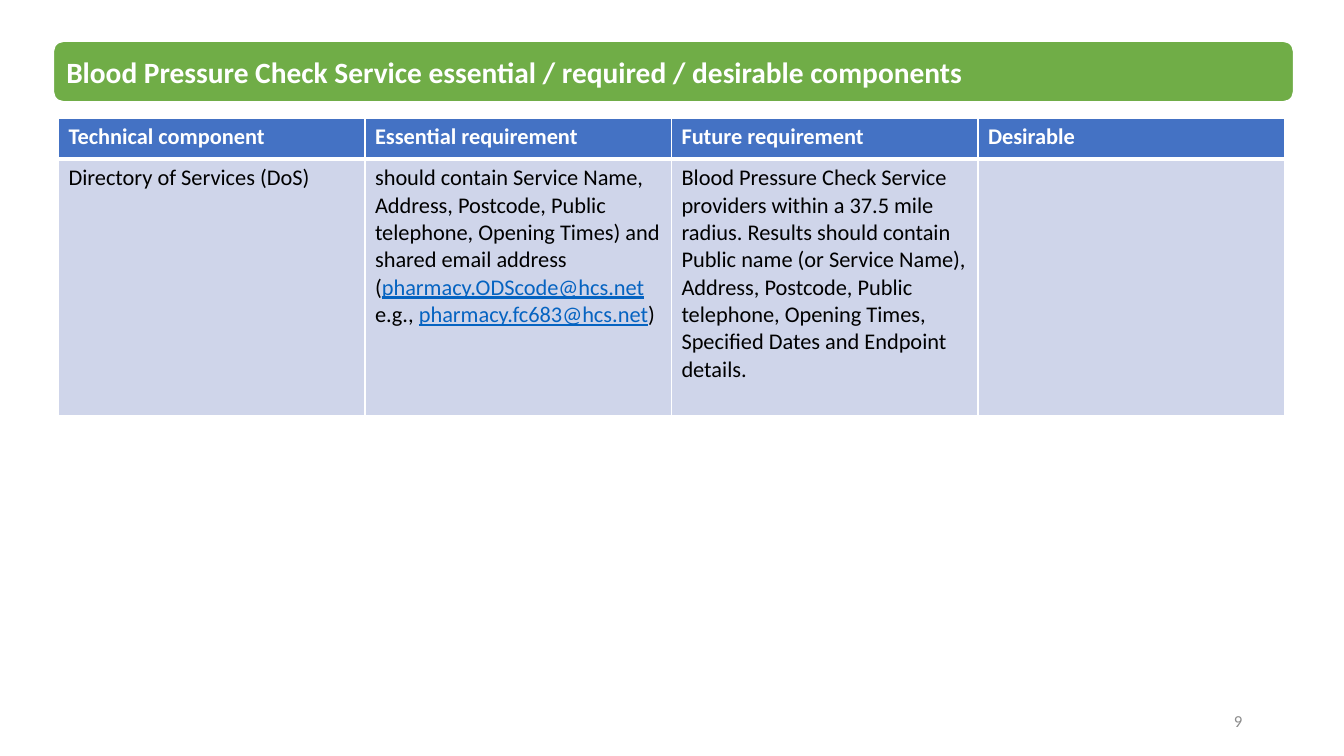
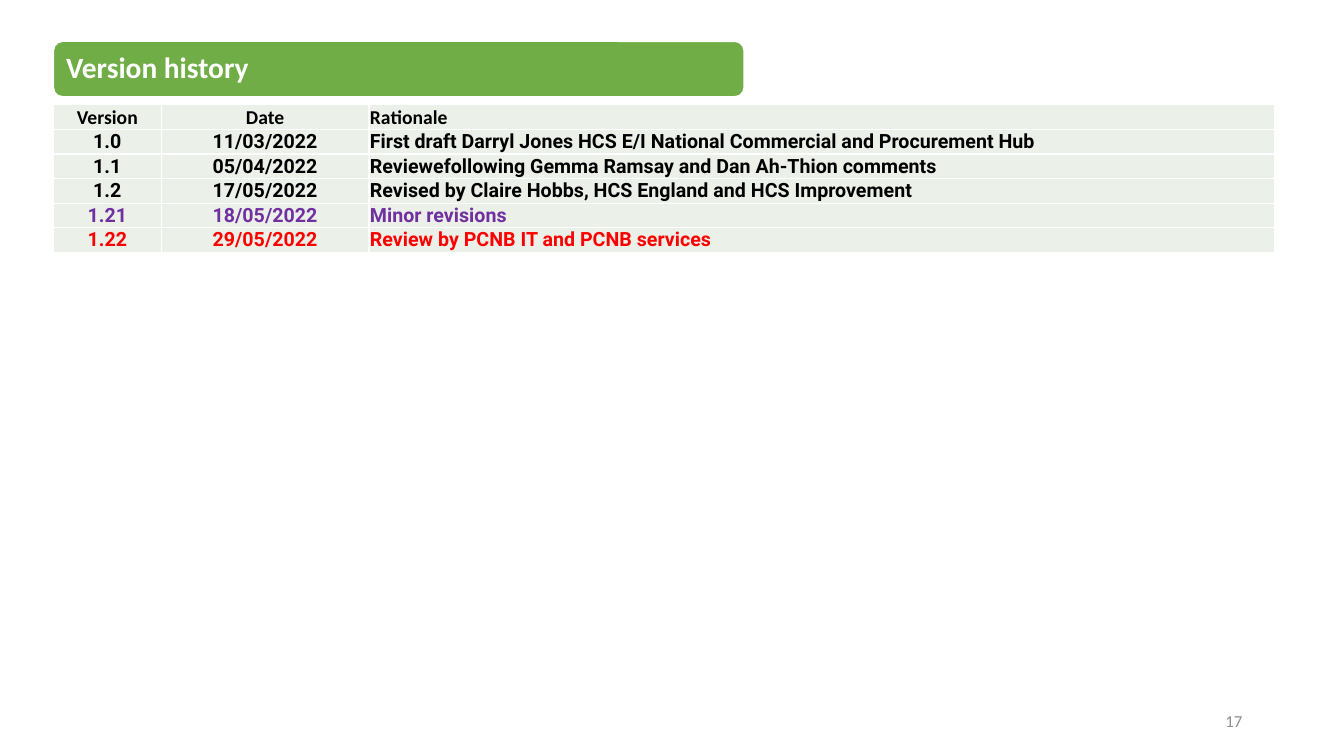
from dataclasses import dataclass
from typing import Any

import pptx
import pptx.dml.color
import pptx.enum.shapes
import pptx.enum.text
import pptx.oxml
import pptx.oxml.ns
import pptx.util

Inches = pptx.util.Inches
Pt = pptx.util.Pt
Color = pptx.dml.color.RGBColor
Align = pptx.enum.text.PP_ALIGN
Anchor = pptx.enum.text.MSO_ANCHOR


@dataclass(frozen=True)
class Theme:
    font: str = "Calibri"
    alt: str = "Roboto"
    white: Color = Color.from_string("FFFFFF")
    black: Color = Color.from_string("000000")
    gray: Color = Color.from_string("8C8C8C")
    green: Color = Color.from_string("70AD47")
    blue: Color = Color.from_string("4472C4")
    pale: Color = Color.from_string("CFD5EA")
    mint: Color = Color.from_string("EBF1E9")
    link: Color = Color.from_string("0563C1")
    purple: Color = Color.from_string("7030A0")
    red: Color = Color.from_string("FF0000")
    title: int = 21
    body: int = 16
    small: int = 14
    foot: int = 12


THEME = Theme()


@dataclass(frozen=True)
class Band:
    text: str
    width: float
    height: float
    pitch: float = 1.0


@dataclass(frozen=True)
class Style:
    """Look of one table row; rule is the width of its bottom border."""
    fill: Color
    color: Color
    size: int
    bold: bool = True
    font: str = THEME.font
    rule: float = 1


@dataclass(frozen=True)
class Row:
    """Cells are text, or a tuple in which every second part is a link."""
    cells: tuple[str | tuple[str, ...], ...]
    style: Style
    height: float


@dataclass(frozen=True)
class Grid:
    left: float
    top: float
    cols: tuple[float, ...]
    rows: tuple[Row, ...]
    center: int = 0  # number of leading columns that are centred
    tight: bool = False


@dataclass(frozen=True)
class Page:
    number: int
    band: Band
    grid: Grid


HEAD = Style(THEME.blue, THEME.white, THEME.body, rule=3)
BODY = Style(THEME.pale, THEME.black, THEME.body, bold=False)
TOP = Style(THEME.mint, THEME.black, THEME.small)


def log(version: str, date: str, reason: str, color: Color = THEME.black) -> Row:
    style = Style(THEME.mint, color, THEME.small, font=THEME.alt)
    return Row((version, date, reason), style, 0.24)


PAGES = (
    Page(
        9,
        Band("Blood Pressure Check Service essential / required / desirable components",
             12.3, 0.6),
        Grid(0.58, 1.17, (3.04,) * 4, (
            Row(("Technical component", "Essential requirement",
                 "Future requirement", "Desirable"), HEAD, 0.41),
            Row((
                "Directory of Services (DoS)",
                ("should contain Service Name, Address, Postcode, Public telephone, "
                 "Opening Times) and shared email address (",
                 "pharmacy.ODScode@hcs.net", " e.g., ", "pharmacy.fc683@hcs.net", ")"),
                "Blood Pressure Check Service providers within a 37.5 mile radius. "
                "Results should contain Public name (or Service Name), Address, "
                "Postcode, Public telephone, Opening Times, Specified Dates and "
                "Endpoint details.",
                "",
            ), BODY, 2.54),
        )),
    ),
    Page(
        17,
        Band("Version history", 6.85, 0.55, pitch=0.9),
        Grid(0.53, 1.04, (1.07, 2.06, 8.98), (
            Row(("Version", "Date", "Rationale"), TOP, 0.24),
            log("1.0", "11/03/2022",
                "First draft Darryl Jones HCS E/I National Commercial and Procurement Hub"),
            log("1.1", "05/04/2022",
                "Reviewefollowing Gemma Ramsay and Dan Ah-Thion comments"),
            log("1.2", "17/05/2022",
                "Revised by Claire Hobbs, HCS England and HCS Improvement"),
            log("1.21", "18/05/2022", "Minor revisions", THEME.purple),
            log("1.22", "29/05/2022", "Review by PCNB IT and PCNB services", THEME.red),
        ), center=2, tight=True),
    ),
)


def paint(run: Any, size: int, color: Color, bold: bool = False,
          font: str = THEME.font) -> None:
    run.font.name = font
    run.font.size = Pt(size)
    run.font.bold = bold
    run.font.color.rgb = color


def add_band(slide: Any, band: Band) -> None:
    shape = slide.shapes.add_shape(
        pptx.enum.shapes.MSO_SHAPE.ROUNDED_RECTANGLE,
        Inches(0.53), Inches(0.41), Inches(band.width), Inches(band.height))
    shape.shadow.inherit = False
    shape.fill.solid()
    shape.fill.fore_color.rgb = THEME.green
    shape.line.color.rgb = THEME.white
    shape.line.width = Pt(1)
    frame = shape.text_frame
    frame.text = band.text
    frame.vertical_anchor = Anchor.MIDDLE
    para = frame.paragraphs[0]
    para.alignment = Align.LEFT
    para.line_spacing = band.pitch
    paint(para.runs[0], THEME.title, THEME.white, bold=True)


def add_foot(slide: Any, number: int) -> None:
    box = slide.shapes.add_textbox(Inches(9.42), Inches(6.95), Inches(3), Inches(0.4))
    frame = box.text_frame
    frame.word_wrap = True
    frame.text = str(number)
    frame.vertical_anchor = Anchor.MIDDLE
    para = frame.paragraphs[0]
    para.alignment = Align.RIGHT
    paint(para.runs[0], THEME.foot, THEME.gray)


def edge(cell: Any, base: float) -> None:
    """Draw the white borders of a cell, with the given bottom width."""
    props = cell._tc.get_or_add_tcPr()
    space = pptx.oxml.ns.nsdecls("a")
    for spot, side in enumerate("LRTB"):
        width = Pt(base if side == "B" else 1)
        props.insert(spot, pptx.oxml.parse_xml(
            f'<a:ln{side} {space} w="{width}"><a:solidFill>'
            f'<a:srgbClr val="{THEME.white}"/></a:solidFill></a:ln{side}>'))


def fill_cell(cell: Any, text: str | tuple[str, ...], style: Style) -> None:
    cell.fill.solid()
    cell.fill.fore_color.rgb = style.fill
    edge(cell, style.rule)
    para = cell.text_frame.paragraphs[0]
    for spot, part in enumerate((text,) if isinstance(text, str) else text):
        link = spot % 2 == 1
        run = para.add_run()
        run.text = part
        paint(run, style.size, THEME.link if link else style.color,
              style.bold, style.font)
        run.font.underline = link


def add_grid(slide: Any, grid: Grid) -> None:
    table = slide.shapes.add_table(
        len(grid.rows), len(grid.cols), Inches(grid.left), Inches(grid.top),
        Inches(sum(grid.cols)), Inches(sum(row.height for row in grid.rows))).table
    table.horz_banding = False
    for col, width in zip(table.columns, grid.cols):
        col.width = Inches(width)
    for line, row in zip(table.rows, grid.rows):
        line.height = Inches(row.height)
        for spot, (cell, text) in enumerate(zip(line.cells, row.cells)):
            fill_cell(cell, text, row.style)
            if spot < grid.center:
                cell.text_frame.paragraphs[0].alignment = Align.CENTER
            if grid.tight:
                cell.margin_left = cell.margin_right = cell.margin_top = Inches(0.01)
                cell.margin_bottom = 0


def main() -> None:
    deck = pptx.Presentation()
    deck.slide_width = Inches(13.33)
    deck.slide_height = Inches(7.5)
    for page in PAGES:
        slide = deck.slides.add_slide(deck.slide_layouts[6])
        add_band(slide, page.band)
        add_grid(slide, page.grid)
        add_foot(slide, page.number)
    deck.save("out.pptx")


if __name__ == "__main__":
    main()
